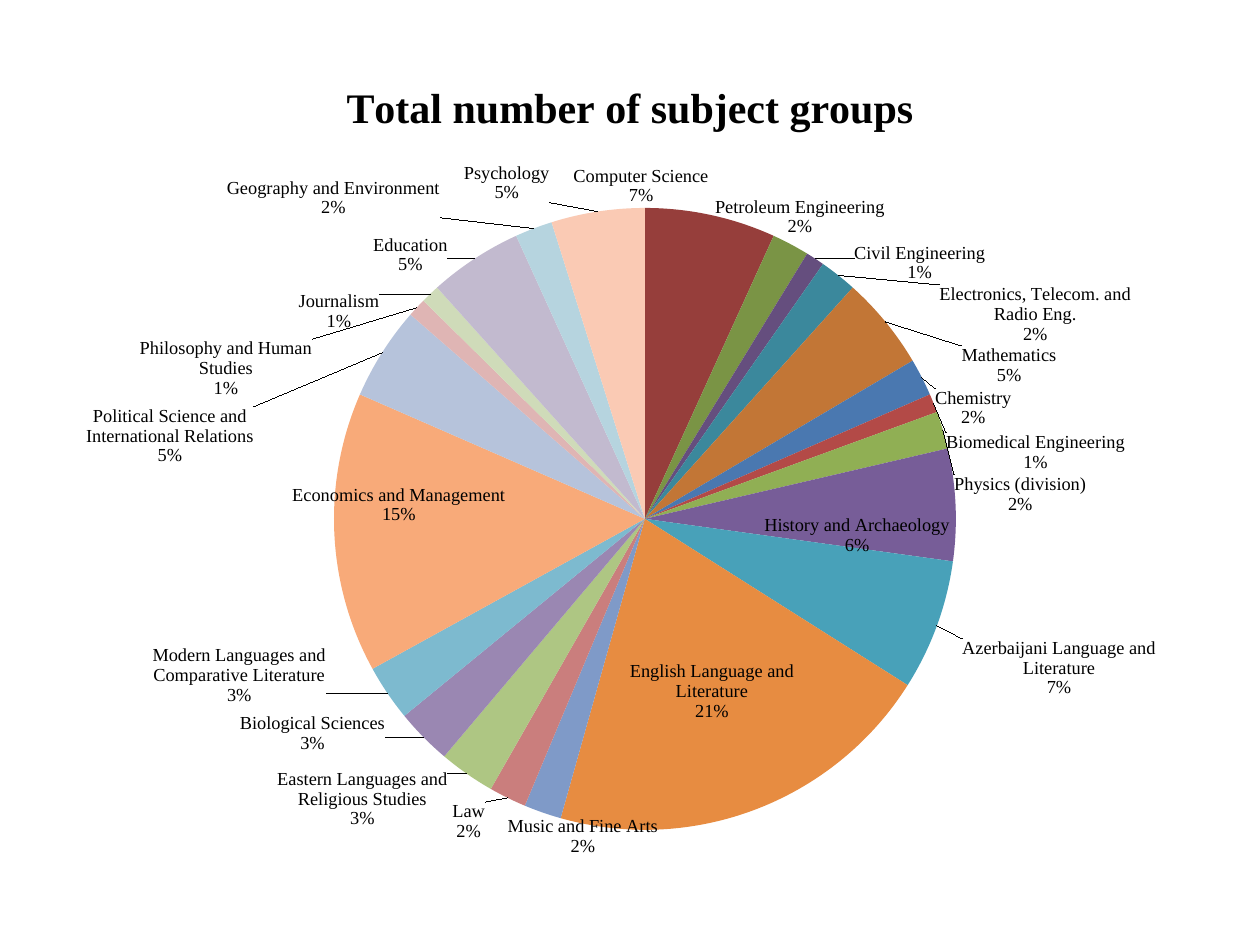
import math
from typing import NamedTuple

from pptx import Presentation, util as u
from pptx.chart.data import CategoryChartData
from pptx.dml.color import RGBColor
from pptx.enum import chart as ch
from pptx.oxml import parse_xml
from pptx.oxml.ns import nsdecls, qn

PX = 914400 // 126
FONT = "Times New Roman"
TITLE = "Total number of subject groups"
CHART = (63, 49, 1134, 857)
CENTRE_X, CENTRE_Y, RADIUS = 645, 519, 311
LABEL_GAP, LINE_HEIGHT = 5, 20


class Subject(NamedTuple):
    """A slice, with the left, top, width (px) and line count of its label."""
    name: str
    percent: int
    color: str
    left: int
    top: int
    width: int
    lines: int = 2


SUBJECTS = [
    Subject("Computer Science", 7, "963E3B", 573, 168, 135),
    Subject("Petroleum Engineering", 2, "7A9445", 714, 199, 170),
    Subject("Civil Engineering", 1, "654E7E", 853, 245, 131),
    Subject("Electronics, Telecom. and Radio Eng.", 2, "3B889C", 938, 286, 191, 3),
    Subject("Mathematics", 5, "C27636", 960, 347, 94),
    Subject("Chemistry", 2, "4A78B0", 933, 389, 76),
    Subject("Biomedical Engineering", 1, "B34A47", 944, 433, 179),
    Subject("Physics (division)", 2, "90AF54", 952, 475, 136),
    Subject("History and Archaeology", 6, "775D98", 762, 496, 185),
    Subject("Azerbaijani Language and Literature", 7, "48A1B9", 960, 638, 162, 3),
    Subject("English Language and Literature", 21, "E78C41", 629, 660, 164, 3),
    Subject("Music and Fine Arts", 2, "7F9AC8", 509, 815, 150),
    Subject("Law", 2, "CA7E7D", 453, 800, 33),
    Subject("Eastern Languages and Religious Studies", 3, "AEC683", 279, 768, 170, 3),
    Subject("Biological Sciences", 3, "9A87B2", 242, 712, 145),
    Subject("Modern Languages and Comparative Literature", 3, "7DBACF", 138, 645, 190, 3),
    Subject("Economics and Management", 15, "F8AA79", 396, 505, 112, 3),
    Subject("Political Science and International Relations", 5, "B6C3DB", 89, 407, 167, 3),
    Subject("Philosophy and Human Studies", 1, "DFB5B4", 142, 340, 172, 3),
    Subject("Journalism", 1, "CFDBB9", 301, 293, 80),
    Subject("Education", 5, "C2BACF", 375, 237, 74),
    Subject("Geography and Environment", 2, "B6D4DF", 229, 180, 212),
    Subject("Psychology", 5, "FACAB4", 465, 165, 85),
]
TOTAL = sum(s.percent for s in SUBJECTS)


def rgb(color: str) -> RGBColor:
    return RGBColor.from_string(color)


def style(font, size: float, bold: bool = False) -> None:
    values = {"name": FONT, "size": u.Pt(size), "bold": bold}
    for key, value in values.items():
        setattr(font, key, value)
    font.color.rgb = rgb("000000")


def layout(target: str = "", **fractions: float):
    """Manual layout element; fractions are x, y and optionally w, h."""
    parts = [f'<c:layoutTarget val="{target}"/>'] if target else []
    parts += [f'<c:{k}Mode val="edge"/>' for k in "xy" if target]
    parts += [f'<c:{k} val="{v:.4f}"/>' for k, v in fractions.items()]
    return parse_xml(f'<c:layout {nsdecls("c")}><c:manualLayout>'
                     f'{"".join(parts)}</c:manualLayout></c:layout>')


def label_offset(s: Subject, middle: float) -> tuple[float, float]:
    """Shift from the automatic place outside the slice, in chart fractions."""
    angle = math.tau * middle / TOTAL
    dx, dy = math.sin(angle), -math.cos(angle)
    reach = RADIUS + LABEL_GAP
    height = s.lines * LINE_HEIGHT
    auto_left = CENTRE_X + reach * dx - (s.width if dx < 0 else 0)
    auto_top = CENTRE_Y + reach * dy - (height if dy < 0 else 0)
    return (s.left - auto_left) / CHART[2], (s.top - auto_top) / CHART[3]


def format_label(point, s: Subject, middle: float) -> None:
    label = point.data_label
    style(label.font, 10.5)
    if round(100 * s.percent / TOTAL) != s.percent:
        tf = label.text_frame
        tf.text = f"{s.name}\n{s.percent}%"
        for p in tf.paragraphs:
            style(p.runs[0].font, 10.5)
    label.position = ch.XL_LABEL_POSITION.OUTSIDE_END
    dlbl = label._dLbl
    shown = {"c:showVal": "0", "c:showCatName": "1", "c:showPercent": "1"}
    for tag, value in shown.items():
        dlbl.find(qn(tag)).set("val", value)
    dlbl.append(parse_xml(f'<c:separator {nsdecls("c")}>\n</c:separator>'))
    x, y = label_offset(s, middle)
    dlbl.find(qn("c:idx")).addnext(layout(x=x, y=y))


def add_title(chart) -> None:
    chart.has_title = True
    tf = chart.chart_title.text_frame
    tf.text = TITLE
    style(tf.paragraphs[0].runs[0].font, 24, bold=True)


def place_plot(chart) -> None:
    left, top, width, height = CHART
    area = chart._chartSpace.chart.plotArea
    for old in area.findall(qn("c:layout")):
        area.remove(old)
    area.insert(0, layout(
        "inner",
        x=(CENTRE_X - RADIUS - left) / width, y=(CENTRE_Y - RADIUS - top) / height,
        w=2 * RADIUS / width, h=2 * RADIUS / height))


def add_pie(slide) -> None:
    data = CategoryChartData()
    data.categories = [""] + [s.name for s in SUBJECTS]
    data.add_series(TITLE, [None] + [s.percent for s in SUBJECTS])
    chart = slide.shapes.add_chart(
        ch.XL_CHART_TYPE.PIE, *(v * PX for v in CHART), data).chart
    chart.has_legend = False
    style(chart.font, 10)
    add_title(chart)
    place_plot(chart)
    plot = chart.plots[0]
    plot.vary_by_categories = True
    series = plot.series[0]
    labels = series.data_labels
    style(labels.font, 10.5)
    shown = {"show_value": False, "show_category_name": True, "show_percentage": True,
             "position": ch.XL_LABEL_POSITION.OUTSIDE_END}
    for key, value in shown.items():
        setattr(labels, key, value)
    start = 0
    for i, s in enumerate(SUBJECTS, 1):
        point = series.points[i]
        point.format.fill.solid()
        point.format.fill.fore_color.rgb = rgb(s.color)
        format_label(point, s, start + s.percent / 2)
        start += s.percent


def main() -> None:
    prs = Presentation()
    prs.slide_width, prs.slide_height = 1260 * PX, 945 * PX
    add_pie(prs.slides.add_slide(prs.slide_layouts[6]))
    prs.save("out.pptx")


if __name__ == "__main__":
    main()
